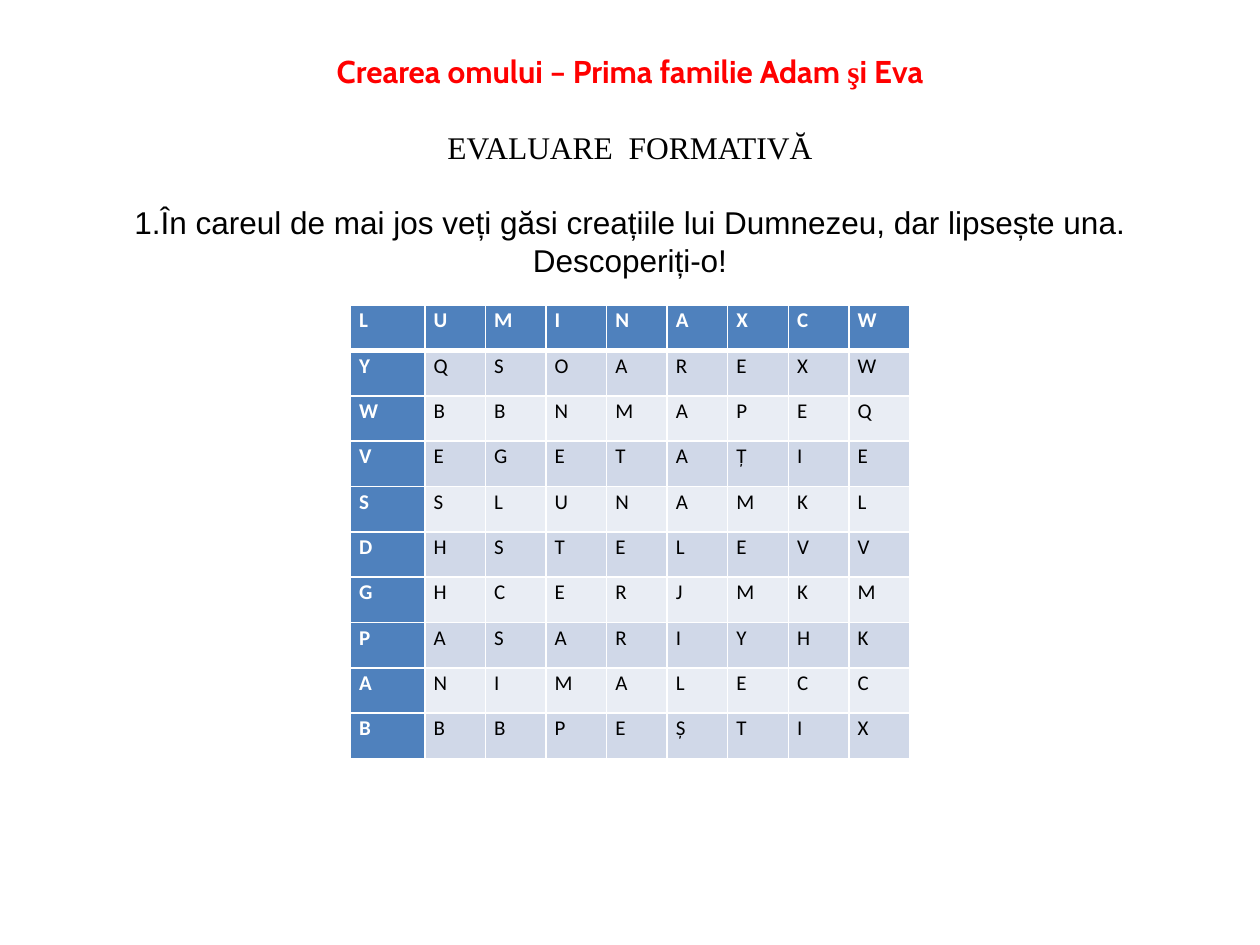
from lxml import etree
from pptx import Presentation
from pptx.dml.color import RGBColor
from pptx.enum.text import MSO_ANCHOR, MSO_AUTO_SIZE, PP_ALIGN
from pptx.oxml.ns import qn
from pptx.util import Pt

CENTER = PP_ALIGN.CENTER
MIDDLE = MSO_ANCHOR.MIDDLE
NO_FIT = MSO_AUTO_SIZE.NONE

COLORS = {
    "red": "FF0000", "black": "000000", "white": "FFFFFF",
    "head": "4F81BD", "odd": "D0D8E8", "even": "E9EDF4",
}
LINE = 21.6
SERIF = "Times New Roman"

# One entry per paragraph: colour, bold, runs of (text, font)
TITLE = [
    ("red", True, [("Crearea omului – Prima familie Adam ", "Cabin"),
                   ("ş", SERIF), ("i Eva", "Cabin")]),
    ("black", False, [("EVALUARE  FORMATIVĂ", SERIF)]),
    ("black", False, [("1.În careul de mai jos veți găsi creațiile lui Dumnezeu, "
                       "dar lipsește una. Descoperiți-o!", "Arial")]),
]
ROWS = [
    "LUMINAXCW", "YQSOAREXW", "WBBNMAPEQ", "VEGETAȚIE", "SSLUNAMKL",
    "DHSTELEVV", "GHCERJMKM", "PASARIYHK", "ANIMALECC", "BBBPEȘTIX",
]


def color(name):
    return RGBColor.from_string(COLORS[name])


def style(font, size, tint, bold):
    font.size = Pt(size)
    font.bold = bold
    font.color.rgb = color(tint)


def add_title(slide, left, top, width, height):
    title = slide.shapes.title
    title.left, title.top = Pt(left), Pt(top)
    title.width, title.height = Pt(width), Pt(height)
    frame = title.text_frame
    frame.word_wrap = True
    frame.auto_size = NO_FIT
    frame.vertical_anchor = MIDDLE
    for i, (tint, bold, runs) in enumerate(TITLE):
        para = frame.add_paragraph() if i else frame.paragraphs[0]
        para.alignment = CENTER
        para.line_spacing = Pt(LINE)
        para.space_before = Pt(LINE if i else 0)
        style(para.font, 18, tint, bold)
        for text, face in runs:
            run = para.add_run()
            run.text = text
            run.font.name = face
            style(run.font, 18, tint, bold)


def add_edges(cell, widths):
    """Draw white cell borders; widths are left, right, top, bottom."""
    props = cell._tc.get_or_add_tcPr()
    for side, width in zip("LRTB", widths):
        edge = etree.SubElement(props, qn(f"a:ln{side}"), w=str(Pt(width)))
        fill = etree.SubElement(edge, qn("a:solidFill"))
        etree.SubElement(fill, qn("a:srgbClr"), val=COLORS["white"])


def fill_cell(cell, text, row, col):
    head = row == 0 or col == 0
    add_edges(cell, (1, 1, 3 if row == 1 else 1, 3 if row == 0 else 1))
    cell.fill.solid()
    cell.fill.fore_color.rgb = color("head" if head else "odd" if row % 2 else "even")
    cell.margin_left = cell.margin_right = Pt(5)
    cell.margin_top, cell.margin_bottom = Pt(0.7), Pt(0)
    cell.text = text
    para = cell.text_frame.paragraphs[0]
    para.line_spacing = 1.06
    para.font.name = "Calibri"
    style(para.font, 12, "white" if head else "black", head)


def add_grid(slide, left, top, width, height):
    count = len(ROWS[0])
    table = slide.shapes.add_table(
        len(ROWS), count, Pt(left), Pt(top), Pt(width), Pt(height)).table
    first = 42.5
    for col, column in enumerate(table.columns):
        column.width = Pt((width - first) / (count - 1) if col else first)
    for row, word in enumerate(ROWS):
        table.rows[row].height = Pt(height / len(ROWS))
        for col, letter in enumerate(word):
            fill_cell(table.cell(row, col), letter, row, col)


def main():
    deck = Presentation()
    deck.slide_width, deck.slide_height = Pt(720), Pt(540)
    slide = deck.slides.add_slide(deck.slide_layouts[5])
    add_title(slide, 36, 21.6, 648, 146)
    add_grid(slide, 200.3, 174.4, 319.5, 259.2)
    deck.save("out.pptx")


if __name__ == "__main__":
    main()
